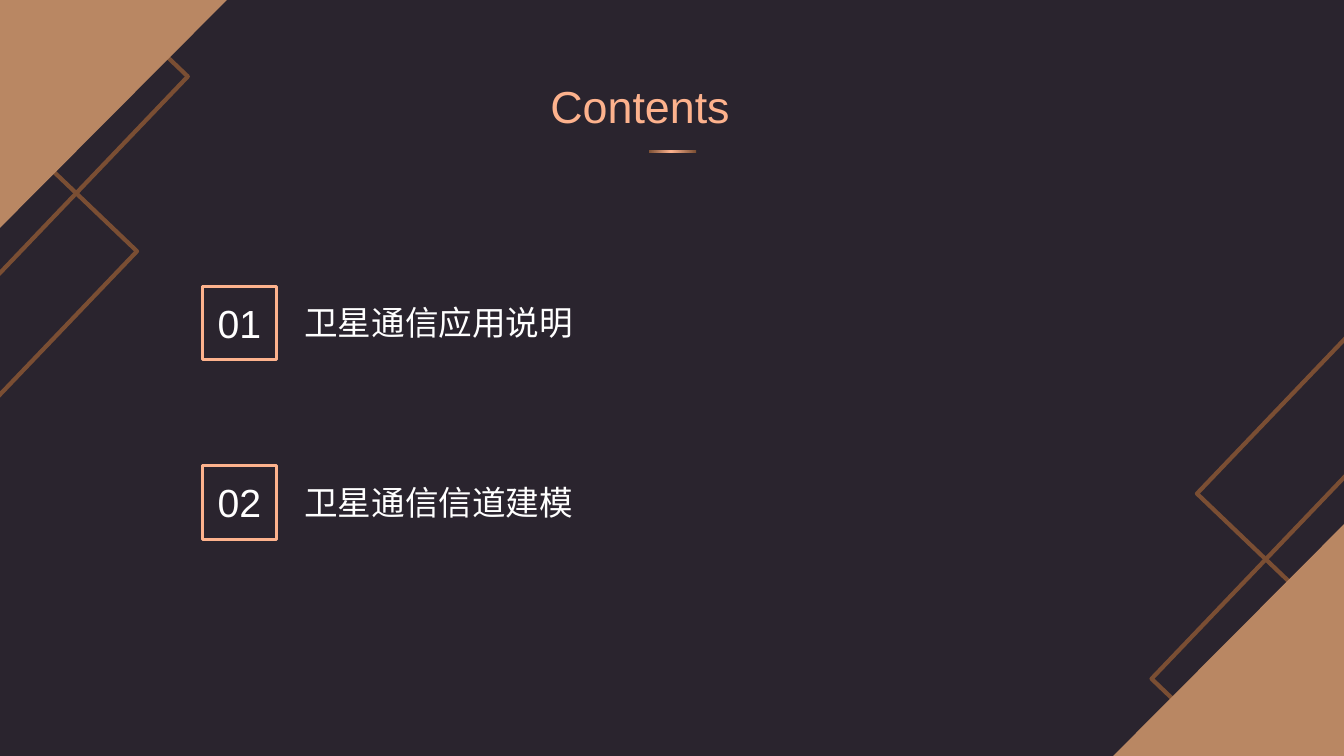
from copy import deepcopy

from pptx import Presentation
from pptx.dml.color import RGBColor
from pptx.enum.shapes import MSO_SHAPE
from pptx.enum.text import MSO_AUTO_SIZE, PP_ALIGN
from pptx.oxml.ns import qn
from pptx.util import Inches, Pt

NIGHT, BROWN, COPPER, PEACH, WHITE = "2A242E", "7A4E33", "B98763", "FDB28D", "FFFFFF"
WIDTH, HEIGHT = 13.33, 7.5
TOPICS = ["卫星通信应用说明", "卫星通信信道建模"]
TOPIC_PITCH = 1.78


def colour(hex_code):
    """Turn a hex string into a colour."""
    return RGBColor.from_string(hex_code)


def add_shape(slide, preset, box, fill=None, line=None, weight=0, turn=0):
    """Draw a preset shape in a box of left, top, width, height in inches."""
    shape = slide.shapes.add_shape(preset, *map(Inches, box))
    shape.shadow.inherit = False
    shape.rotation = turn
    if fill:
        shape.fill.solid()
        shape.fill.fore_color.rgb = colour(fill)
    else:
        shape.fill.background()
    if line:
        shape.line.color.rgb = colour(line)
        shape.line.width = Pt(weight)
    else:
        shape.line.fill.background()
    return shape


def add_text(slide, box, words, size, ink, align=PP_ALIGN.LEFT, wrap=True):
    """Write one line of text in a box."""
    frame = slide.shapes.add_textbox(*map(Inches, box)).text_frame
    frame.word_wrap = wrap
    frame.auto_size = MSO_AUTO_SIZE.SHAPE_TO_FIT_TEXT
    paragraph = frame.paragraphs[0]
    paragraph.alignment = align
    run = paragraph.add_run()
    run.text = words
    run.font.name = "Arial"
    run.font.size = Pt(size)
    run.font.color.rgb = colour(ink)


def add_corner(slide, box, bands, turn):
    """Fill a slide corner with a triangle over tilted band outlines."""
    left, top, width, height = box
    for shift_x, shift_y, length, depth in bands:
        band_left = left + (width - length) / 2 + shift_x
        band_top = top + (height - depth) / 2 + shift_y
        add_shape(slide, MSO_SHAPE.RECTANGLE, (band_left, band_top, length, depth),
                  line=BROWN, weight=3, turn=(turn + 313.7) % 360)
    wedge = add_shape(slide, MSO_SHAPE.ISOSCELES_TRIANGLE, box, fill=COPPER, turn=turn)
    wedge.adjustments[0] = 1


def add_heading(slide, box):
    """Write the heading with a glowing rule below it."""
    left, top, width, _ = box
    add_text(slide, box, "Contents", 32, PEACH, align=PP_ALIGN.JUSTIFY)
    rule_width = 0.47
    rule = add_shape(slide, MSO_SHAPE.RECTANGLE,
                     (left + (width - rule_width) / 2, top + 0.76, rule_width, 0.03))
    rule.fill.gradient()
    rule.fill.gradient_angle = 0
    stop_list = rule._element.spPr.find(qn("a:gradFill")).find(qn("a:gsLst"))
    stop_list.insert(1, deepcopy(stop_list[0]))
    glow = [(0, BROWN), (0.47, PEACH), (1, BROWN)]
    for stop, (position, tint) in zip(rule.fill.gradient_stops, glow):
        stop.position = position
        stop.color.rgb = colour(tint)


def add_topic(slide, box, number, topic):
    """Place a framed number and its topic from the left of a box."""
    left, top, width, side = box
    add_shape(slide, MSO_SHAPE.RECTANGLE, (left, top, side, side), line=PEACH, weight=2.25)
    add_text(slide, (left + 0.05, top + 0.08, 0.64, 0.57), f"{number:02}", 28, WHITE, wrap=False)
    add_text(slide, (left + 0.91, top + 0.11, width - 0.91, 0.5), topic, 24, WHITE)


def add_contents_slide(deck):
    """Build the contents slide."""
    slide = deck.slides.add_slide(deck.slide_layouts[6])
    slide.background.fill.solid()
    slide.background.fill.fore_color.rgb = colour(NIGHT)
    add_corner(slide, (WIDTH - 2.29, HEIGHT - 2.3, 2.29, 2.3),
               [(0.59, -0.28, 2.83, 1.04), (1.55, -1.63, 2.83, 2.45)], 0)
    add_corner(slide, (-0.01, 0, 2.26, 2.27),
               [(-0.59, 0.28, 2.79, 1.02), (-1.6, 1.53, 2.79, 2.42)], 180)
    add_heading(slide, (5.36, 0.73, 2.62, 0.64))
    for row, topic in enumerate(TOPICS):
        add_topic(slide, (2.01, 2.84 + row * TOPIC_PITCH, 4.08, 0.73), row + 1, topic)


def main():
    """Save the deck."""
    deck = Presentation()
    deck.slide_width, deck.slide_height = Inches(WIDTH), Inches(HEIGHT)
    add_contents_slide(deck)
    deck.save("out.pptx")


if __name__ == "__main__":
    main()
